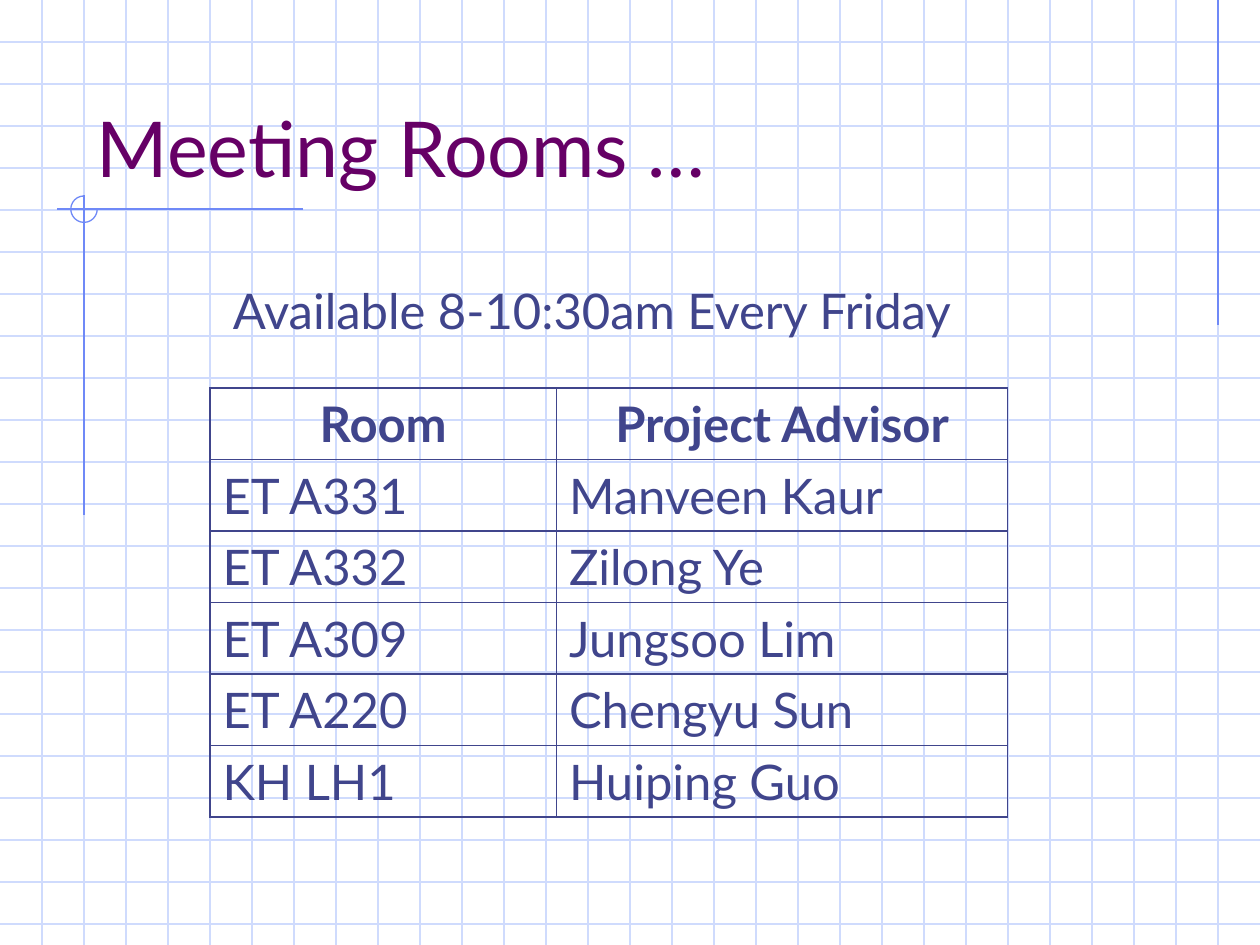
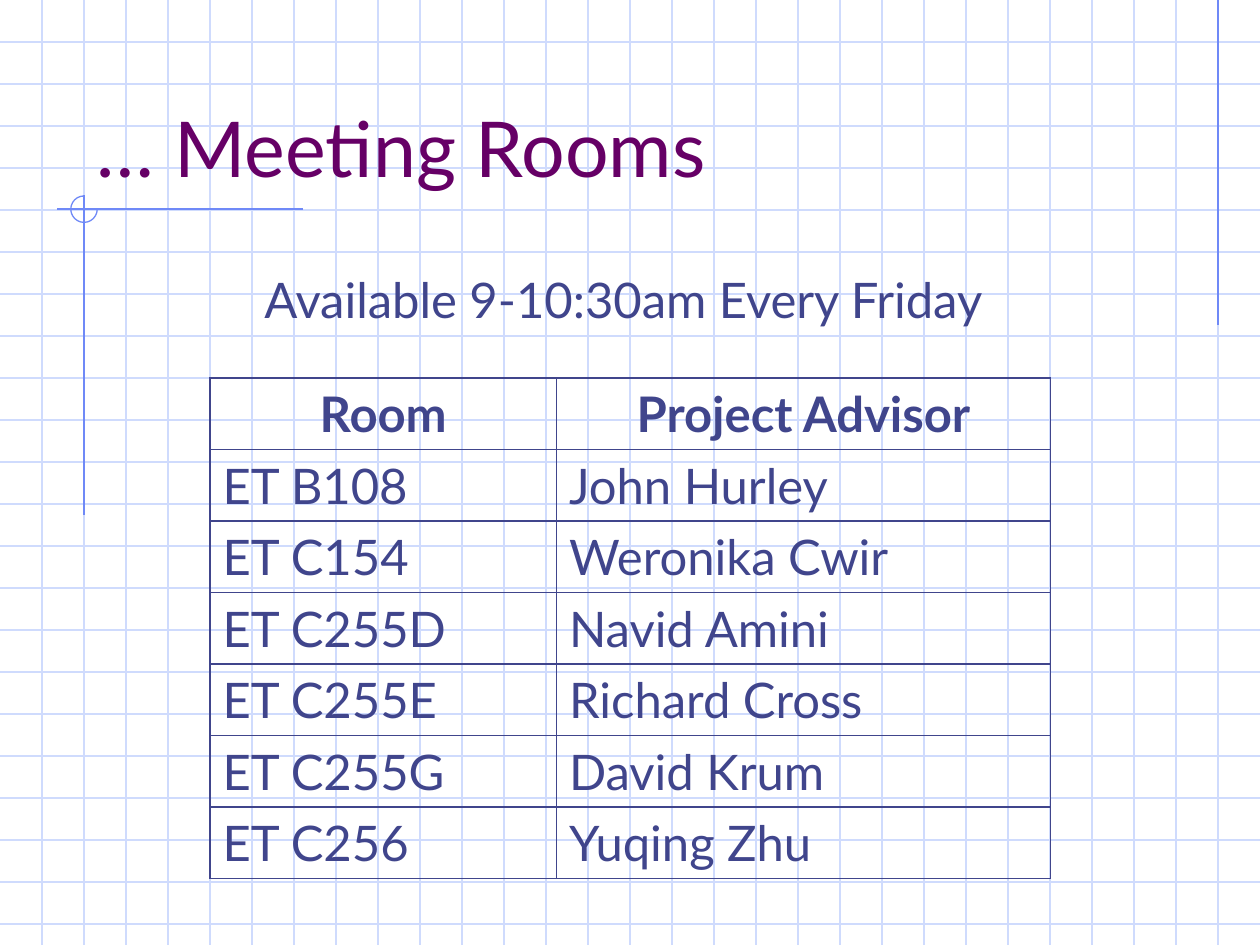
from lxml import etree
from pptx import Presentation
from pptx.dml.color import RGBColor
from pptx.enum.shapes import MSO_CONNECTOR, MSO_SHAPE
from pptx.enum.text import MSO_ANCHOR, MSO_AUTO_SIZE, PP_ALIGN
from pptx.oxml.ns import qn
from pptx.util import Inches, Pt

STRAIGHT = MSO_CONNECTOR.STRAIGHT
ARC = MSO_SHAPE.ARC
BOTTOM = MSO_ANCHOR.BOTTOM
GROW = MSO_AUTO_SIZE.SHAPE_TO_FIT_TEXT
LEFT, CENTER = PP_ALIGN.LEFT, PP_ALIGN.CENTER

PLUM = RGBColor(0x66, 0x00, 0x66)
INDIGO = RGBColor(0x40, 0x45, 0x8C)
SKY = RGBColor(0x6F, 0x89, 0xF7)
PALE = RGBColor(0xCF, 0xDB, 0xFD)
FONT = "Lato"
WIDTH, HEIGHT = 10, 7.5
GRID = 1 / 3
ROOM_WIDTH = 2.75
ROW_HEIGHT = 3.4 / 6
HEADINGS = ("Room", "Project Advisor")

EARLY_ROOMS = [
    ("ET A331", "Manveen Kaur"),
    ("ET A332", "Zilong Ye"),
    ("ET A309", "Jungsoo Lim"),
    ("ET A220", "Chengyu Sun"),
    ("KH LH1", "Huiping Guo"),
]
LATE_ROOMS = [
    ("ET B108", "John Hurley"),
    ("ET C154", "Weronika Cwir"),
    ("ET C255D", "Navid Amini"),
    ("ET C255E", "Richard Cross"),
    ("ET C255G", "David Krum"),
    ("ET C256", "Yuqing Zhu"),
]


def style(paragraph, size, color, bold=False, align=LEFT):
    """Set the font and alignment of a paragraph."""
    paragraph.alignment = align
    font = paragraph.font
    font.name, font.size, font.bold = FONT, Pt(size), bold
    font.color.rgb = color


def add_rule(slide, x1, y1, x2, y2, color=SKY):
    """Draw one thin decorative line."""
    rule = slide.shapes.add_connector(
        STRAIGHT, Inches(x1), Inches(y1), Inches(x2), Inches(y2))
    rule.line.color.rgb = color
    rule.line.width = Pt(0.75)
    etree.SubElement(rule._element.spPr, qn("a:effectLst"))


def add_grid(slide):
    """Rule the background in pale squares."""
    for row in range(1, 23):
        add_rule(slide, 0, row * GRID, WIDTH, row * GRID, PALE)
    for column in range(1, 30):
        add_rule(slide, column * GRID, 0, column * GRID, HEIGHT, PALE)


def add_ornament(slide, x, y):
    """Draw the crossed rules and open ring centred on a point, and the right rule."""
    right = 29 * GRID
    add_rule(slide, right, 0, right, 2.58)
    add_rule(slide, x + 1.74, y, x - 0.21, y)
    add_rule(slide, x, y - 0.11, x, y + 2.43)
    radius = 0.105
    ring = slide.shapes.add_shape(
        ARC, Inches(x - radius), Inches(y - radius), Inches(2 * radius), Inches(2 * radius))
    ring.adjustments[0] = 0
    ring.adjustments[1] = 162
    ring.shadow.inherit = False
    ring.fill.background()
    ring.line.color.rgb = SKY
    ring.line.width = Pt(0.75)


def add_title(slide, title):
    """Write the slide title on the bottom of its box."""
    frame = slide.shapes.add_textbox(
        Inches(0.67), Inches(0.33), Inches(8.5), Inches(1.25)).text_frame
    frame.word_wrap = True
    frame.vertical_anchor = BOTTOM
    frame.text = title
    style(frame.paragraphs[0], 44, PLUM)


def add_hours(slide, hours, left, top):
    """Write the line that tells when the rooms are open."""
    frame = slide.shapes.add_textbox(
        Inches(left), Inches(top), Inches(6), Inches(0.57)).text_frame
    frame.word_wrap = False
    frame.auto_size = GROW
    frame.text = hours
    style(frame.paragraphs[0], 28, INDIGO)


def add_borders(cell):
    """Give a cell a one point border on every side."""
    properties = cell._tc.get_or_add_tcPr()
    for side in ("a:lnL", "a:lnR", "a:lnT", "a:lnB"):
        border = etree.SubElement(properties, qn(side), w=str(Pt(1)))
        fill = etree.SubElement(border, qn("a:solidFill"))
        etree.SubElement(fill, qn("a:srgbClr"), val=str(INDIGO))


def add_rooms(slide, rooms, left, top, advisor_width):
    """Build the table of rooms and advisors."""
    rows = [HEADINGS] + rooms
    widths = (ROOM_WIDTH, advisor_width)
    table = slide.shapes.add_table(
        len(rows), len(widths), Inches(left), Inches(top),
        Inches(sum(widths)), Inches(ROW_HEIGHT * len(rows))).table
    table.first_row = table.horz_banding = False
    for column, width in zip(table.columns, widths):
        column.width = Inches(width)
    for r, row in enumerate(rows):
        for c, entry in enumerate(row):
            cell = table.cell(r, c)
            cell.text = entry
            style(cell.text_frame.paragraphs[0], 28, INDIGO,
                  r == 0, CENTER if r == 0 else LEFT)
            add_borders(cell)
            cell.fill.background()


def add_rooms_slide(deck, title, hours, hours_at, rooms, table_top, advisor_width):
    """Add one slide of meeting rooms."""
    slide = deck.slides.add_slide(deck.slide_layouts[6])
    add_grid(slide)
    add_ornament(slide, 2 * GRID, 1.66)
    add_title(slide, title)
    add_hours(slide, hours, *hours_at)
    add_rooms(slide, rooms, 5 * GRID, table_top, advisor_width)


def main():
    """Build and save the deck."""
    deck = Presentation()
    deck.slide_width, deck.slide_height = Inches(WIDTH), Inches(HEIGHT)
    add_rooms_slide(deck, "Meeting Rooms …", "Available 8-10:30am Every Friday",
                    (1.75, 2.18), EARLY_ROOMS, 3.08, 3.58)
    add_rooms_slide(deck, "… Meeting Rooms", "Available 9-10:30am Every Friday",
                    (2, 2.09), LATE_ROOMS, 3, 3.92)
    deck.save("out.pptx")


if __name__ == "__main__":
    main()
